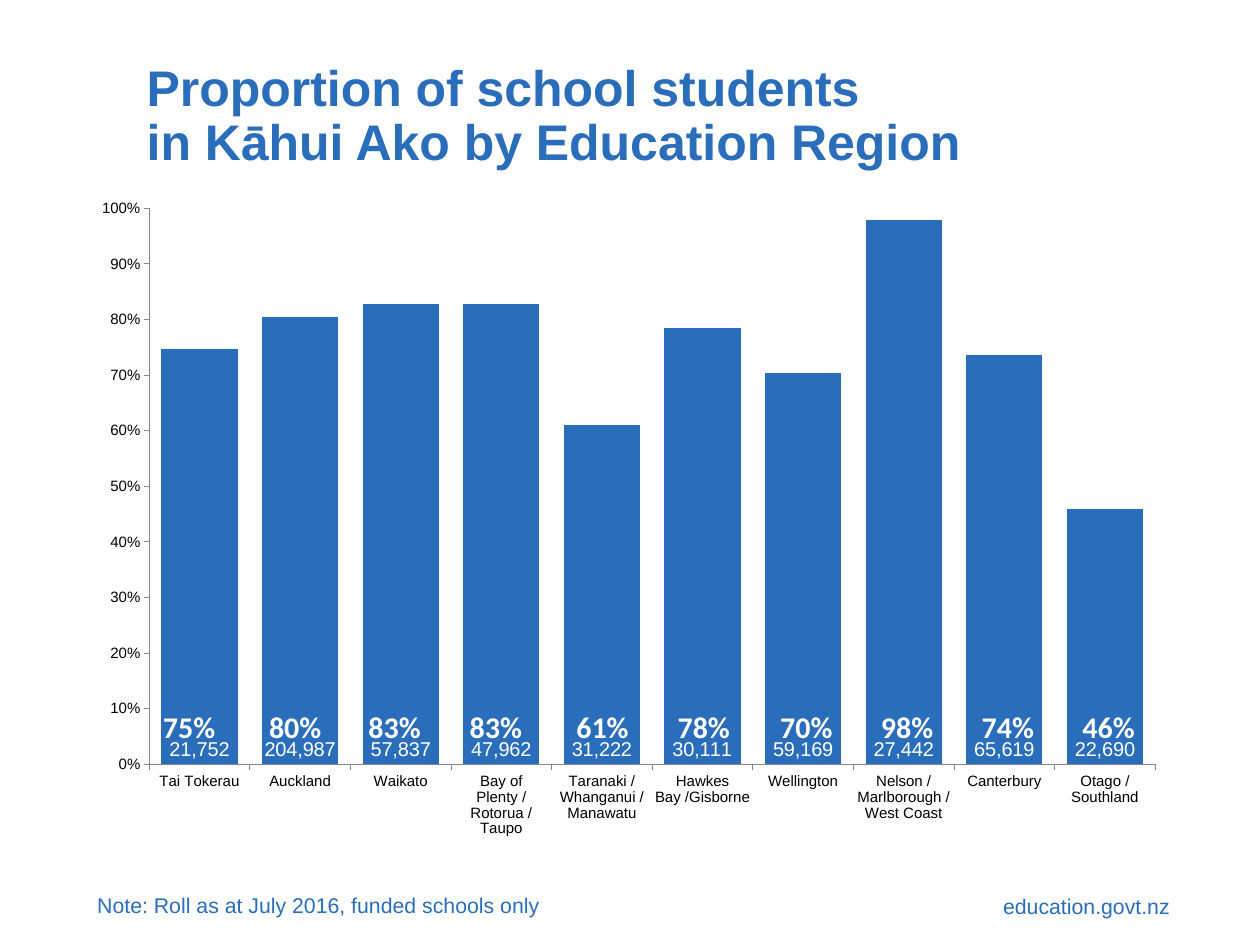
from dataclasses import dataclass

from pptx import Presentation
from pptx.chart.data import CategoryChartData
from pptx.dml.color import RGBColor
from pptx.enum.chart import XL_CHART_TYPE, XL_LABEL_POSITION, XL_TICK_MARK
from pptx.enum.text import MSO_ANCHOR, MSO_AUTO_SIZE, PP_ALIGN
from pptx.oxml import parse_xml
from pptx.oxml.ns import nsdecls, qn
from pptx.util import Inches, Pt

STACKED = XL_CHART_TYPE.COLUMN_STACKED_100
INSIDE_BASE = XL_LABEL_POSITION.INSIDE_BASE
LEFT, CENTER, RIGHT = PP_ALIGN.LEFT, PP_ALIGN.CENTER, PP_ALIGN.RIGHT
NO_TABLE_STYLE = "{2D5ABB26-0587-4C30-8999-92F81FD0307C}"


@dataclass(frozen=True)
class Theme:
    blue: RGBColor = RGBColor(0x2A, 0x6E, 0xBB)
    white: RGBColor = RGBColor(0xFF, 0xFF, 0xFF)
    black: RGBColor = RGBColor(0, 0, 0)
    axis: RGBColor = RGBColor(0x86, 0x86, 0x86)
    font: str = "Arial"
    share_font: str = "Calibri"
    title: int = 40
    share: int = 24
    footer: int = 17
    label: int = 16
    chart: int = 12


THEME = Theme()

TITLE = ["Proportion of school students", "in Kāhui Ako by Education Region"]
NOTE = "Note: Roll as at July 2016, funded schools only"
SITE = "education.govt.nz"

# region, students in Kāhui Ako, other students, share shown, share column width
REGIONS = [
    ("Tai Tokerau", 21752, 7400, "75%", 1.12),
    ("Auckland", 204987, 50000, "80%", 1.24),
    ("Waikato", 57837, 12000, "83%", 0.97),
    ("Bay of Plenty /Rotorua /Taupo", 47962, 10000, "83%", 1.28),
    ("Taranaki /Whanganui /Manawatu", 31222, 20000, "61%", 1.09),
    ("Hawkes Bay /Gisborne", 30111, 8300, "78%", 1.16),
    ("Wellington", 59169, 25000, "70%", 1.12),
    ("Nelson /Marlborough /West Coast", 27442, 600, "98%", 1.12),
    ("Canterbury", 65619, 23600, "74%", 1.12),
    ("Otago /Southland", 22690, 26800, "46%", 1.12),
]
NAMES, STUDENTS, OTHERS, SHARES, WIDTHS = zip(*REGIONS)

# left, top, width, height in inches
TITLE_BOX = (1.53, 0.65, 10.8, 1.31)
CHART_BOX = (0.89, 2.08, 12.19, 7.37)
SHARE_BOX = (1.54, 7.89, sum(WIDTHS), 0.38)
NOTE_BOX = (0.94, 9.84, 10.04, 0.42)
SITE_BOX = (9.96, 9.86, 3.18, 0.42)
# plot area as shares of the chart
PLOT = {"x": 0.063, "y": 0.032, "w": 0.917, "h": 0.838}


def box(inches):
    return [Inches(v) for v in inches]


def style(font, size, color, name=THEME.font, bold=False):
    font.size, font.name, font.bold = Pt(size), name, bold
    font.color.rgb = color


def add_title(slide):
    sp = slide.shapes.title
    sp.left, sp.top, sp.width, sp.height = box(TITLE_BOX)
    tf = sp.text_frame
    tf.text = "\n".join(TITLE)
    tf.word_wrap, tf.auto_size = True, MSO_AUTO_SIZE.NONE
    tf.vertical_anchor = MSO_ANCHOR.TOP
    for p in tf.paragraphs:
        p.alignment, p.line_spacing = LEFT, 0.9
        p.space_before = Pt(0)
        style(p.runs[0].font, THEME.title, THEME.blue, bold=True)


def add_footer(slide, text, place, align):
    tf = slide.shapes.add_textbox(*box(place)).text_frame
    tf.word_wrap = True
    tf.margin_left = tf.margin_right = Inches(0.14)
    tf.margin_top = tf.margin_bottom = Inches(0.07)
    tf.text = text
    p = tf.paragraphs[0]
    p.alignment = align
    style(p.runs[0].font, THEME.footer, THEME.blue)


def fix_plot_area(chart):
    """Pin the inner plot area to the PLOT shares."""
    parts = "".join(f'<c:{k}Mode val="edge"/>' for k in "xy")
    parts += "".join(f'<c:{k} val="{v}"/>' for k, v in PLOT.items())
    layout = parse_xml(
        f'<c:layout {nsdecls("c")}><c:manualLayout>'
        f'<c:layoutTarget val="inner"/>{parts}</c:manualLayout></c:layout>')
    area = chart._chartSpace.chart.plotArea
    for old in area.findall(qn("c:layout")):
        area.remove(old)
    area.insert(0, layout)


def add_region_chart(slide):
    data = CategoryChartData(number_format="#,##0")
    data.categories = NAMES
    data.add_series("Series 1", STUDENTS)
    data.add_series("Series 2", OTHERS)
    chart = slide.shapes.add_chart(STACKED, *box(CHART_BOX), data).chart
    chart.has_legend = chart.has_title = False
    style(chart.font, THEME.chart, THEME.black)

    plot = chart.plots[0]
    plot.gap_width, plot.overlap, plot.vary_by_categories = 32, 100, False
    for series, color in zip(plot.series, (THEME.blue, THEME.white)):
        series.format.fill.solid()
        series.format.fill.fore_color.rgb = color

    labels = plot.series[0].data_labels
    labels.show_value, labels.position = True, INSIDE_BASE
    labels.number_format, labels.number_format_is_linked = "#,##0", False
    style(labels.font, THEME.label, THEME.white)

    for axis in (chart.category_axis, chart.value_axis):
        axis.has_major_gridlines = False
        axis.major_tick_mark = XL_TICK_MARK.OUTSIDE
        axis.format.line.color.rgb = THEME.axis
        axis.format.line.width = Pt(0.75)
    values = chart.value_axis
    values.minimum_scale, values.maximum_scale, values.major_unit = 0, 1, 0.1
    values.tick_labels.number_format = "0%"
    values.tick_labels.number_format_is_linked = False
    fix_plot_area(chart)


def add_share_row(slide):
    frame = slide.shapes.add_table(1, len(SHARES), *box(SHARE_BOX))
    table = frame.table
    table.first_row = table.horz_banding = False
    table._tbl.tblPr.find(qn("a:tableStyleId")).text = NO_TABLE_STYLE
    for column, width, share in zip(table.columns, WIDTHS, SHARES):
        column.width = Inches(width)
    for cell, share in zip(table.rows[0].cells, SHARES):
        cell.fill.background()
        cell.vertical_anchor = MSO_ANCHOR.BOTTOM
        cell.margin_left = cell.margin_right = 0
        cell.margin_top = cell.margin_bottom = 0
        cell.text = share
        p = cell.text_frame.paragraphs[0]
        p.alignment = CENTER
        style(p.runs[0].font, THEME.share, THEME.white, THEME.share_font, True)


def main():
    prs = Presentation()
    prs.slide_width, prs.slide_height = Inches(14), Inches(10.5)
    slide = prs.slides.add_slide(prs.slide_layouts[5])
    add_title(slide)
    add_region_chart(slide)
    add_share_row(slide)
    add_footer(slide, NOTE, NOTE_BOX, LEFT)
    add_footer(slide, SITE, SITE_BOX, RIGHT)
    prs.save("out.pptx")


if __name__ == "__main__":
    main()
